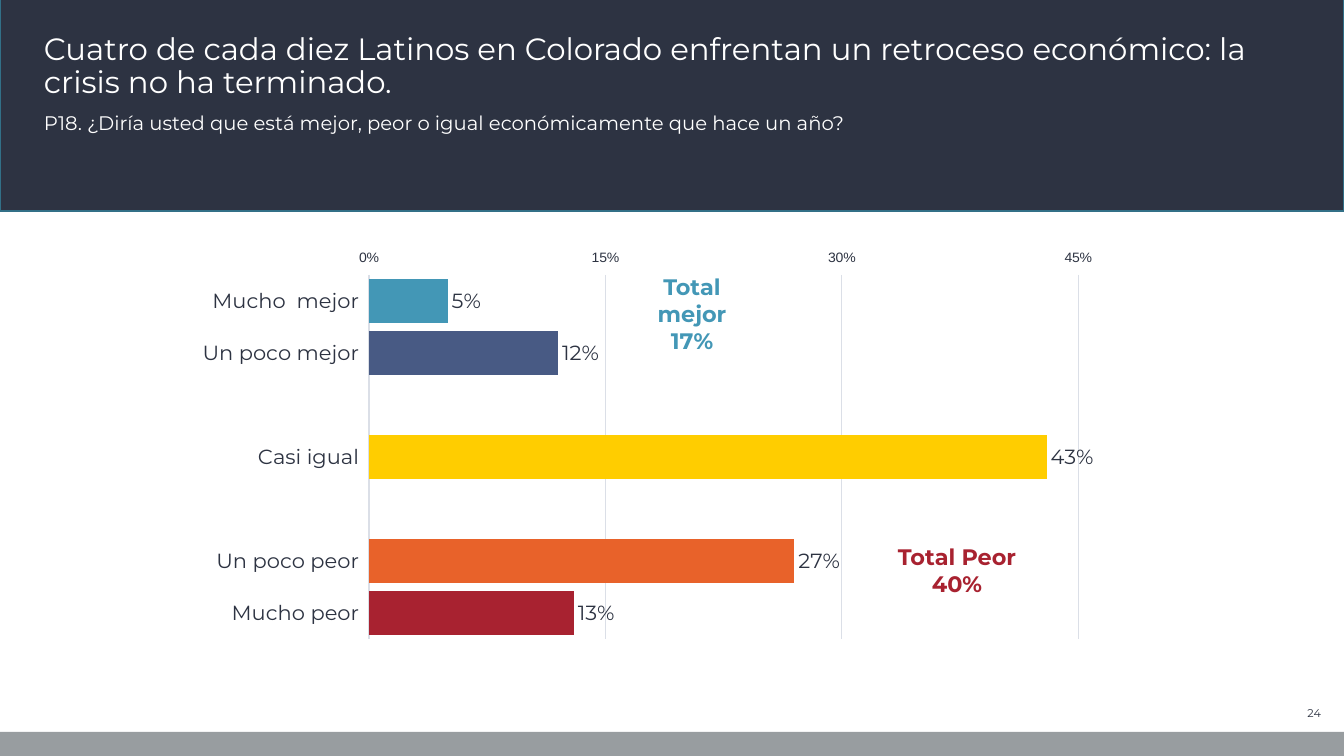
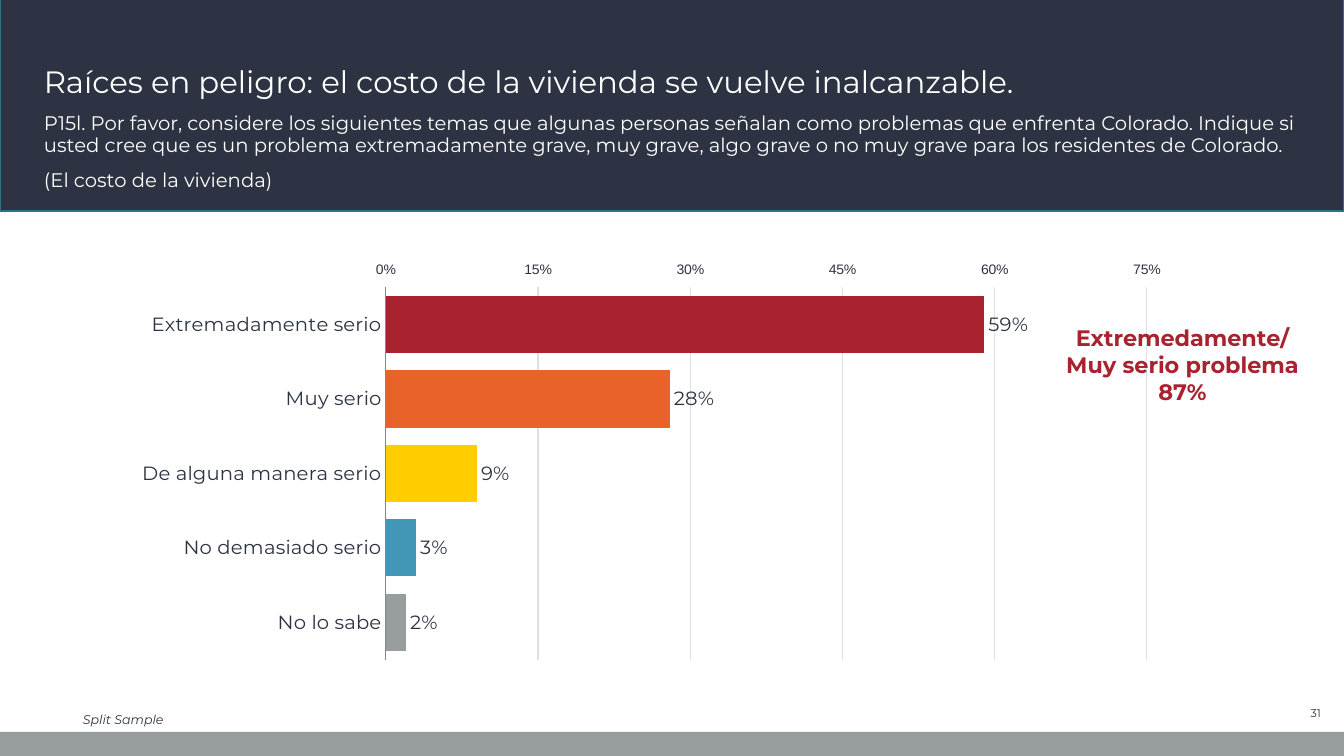
"""Build two survey result slides, each with a bar chart."""
from copy import deepcopy

from lxml import etree
from pptx import Presentation
from pptx.chart.data import CategoryChartData
from pptx.dml.color import RGBColor
from pptx.enum.chart import (XL_AXIS_CROSSES, XL_CHART_TYPE,
                             XL_LABEL_POSITION, XL_TICK_MARK)
from pptx.enum.shapes import MSO_SHAPE
from pptx.enum.text import MSO_ANCHOR, MSO_AUTO_SIZE, PP_ALIGN
from pptx.oxml.ns import qn
from pptx.util import Pt

EMU_PER_PX = 914400 / 100.8
PAGE_WIDTH, PAGE_HEIGHT = 1344, 756
FONT, AXIS_FONT = "Montserrat", "Arial"
COLORS = {
    "navy": "2D3342", "edge": "327087", "gray": "989DA0", "white": "FFFFFF",
    "grid": "DBDFE7", "axis": "868686", "teal": "4397B6", "blue": "485A84",
    "yellow": "FFCD00", "orange": "E8622A", "red": "A82230",
}
RECTANGLE = MSO_SHAPE.RECTANGLE
TOP, MIDDLE, BOTTOM = MSO_ANCHOR.TOP, MSO_ANCHOR.MIDDLE, MSO_ANCHOR.BOTTOM
LEFT, CENTER, RIGHT = PP_ALIGN.LEFT, PP_ALIGN.CENTER, PP_ALIGN.RIGHT
FIT_SHAPE = MSO_AUTO_SIZE.SHAPE_TO_FIT_TEXT
BAR_CLUSTERED = XL_CHART_TYPE.BAR_CLUSTERED
CROSS_AT_MAXIMUM = XL_AXIS_CROSSES.MAXIMUM
OUTSIDE_END = XL_LABEL_POSITION.OUTSIDE_END
TICK_NONE, TICK_OUTSIDE = XL_TICK_MARK.NONE, XL_TICK_MARK.OUTSIDE

SLIDES = [
    {
        "number": "24",
        "title": "Cuatro de cada diez Latinos en Colorado enfrentan un "
                 "retroceso económico: la crisis no ha terminado.",
        "question": ["P18. ¿Diría usted que está mejor, peor o igual "
                     "económicamente que hace un año?"],
        "chart": {
            "box": (100, 250, 1019, 418),
            "plot": (0.264, 0.033, 0.696, 0.896),
            "bars": [("Mucho  mejor", 0.05, "teal"),
                     ("Un poco mejor", 0.12, "blue"),
                     ("", None, None),
                     ("Casi igual", 0.43, "yellow"),
                     ("", None, None),
                     ("Un poco peor", 0.27, "orange"),
                     ("Mucho peor", 0.13, "red")],
            "gap": 20, "maximum": 0.45, "size": 15,
            "tick": TICK_OUTSIDE, "axis_line": False,
        },
        "callouts": [((619, 268, 146, 92), "Total mejor\n17%", "teal"),
                     ((884, 538, 146, 65), "Total Peor\n40%", "red")],
        "footnote": None,
    },
    {
        "number": "31",
        "title": "Raíces en peligro: el costo de la vivienda se vuelve "
                 "inalcanzable.",
        "question": ["P15l. Por favor, considere los siguientes temas que "
                     "algunas personas señalan como problemas que enfrenta "
                     "Colorado. Indique si usted cree que es un problema "
                     "extremadamente grave, muy grave, algo grave o no muy "
                     "grave para los residentes de Colorado.",
                     "(El costo de la vivienda)"],
        "chart": {
            "box": (50, 262, 1162, 423),
            "plot": (0.289, 0.043, 0.655, 0.896),
            "bars": [("Extremadamente serio", 0.59, "red"),
                     ("Muy serio", 0.28, "orange"),
                     ("De alguna manera serio", 0.09, "yellow"),
                     ("No demasiado serio", 0.03, "teal"),
                     ("No lo sabe", 0.02, "gray")],
            "gap": 30, "maximum": 0.75, "size": 14,
            "tick": TICK_NONE, "axis_line": True,
        },
        "callouts": [((1056, 319, 253, 92),
                      "Extremedamente/ Muy serio problema\n87%", "red")],
        "footnote": "Split Sample",
    },
]


def px(length):
    """Turn pixels into EMU."""
    return round(length * EMU_PER_PX)


def place(box):
    """Turn a pixel box into EMU."""
    return [px(length) for length in box]


def color(name):
    """Look up a palette colour."""
    return RGBColor.from_string(COLORS[name])


def set_values(target, values):
    """Set each named attribute of an object."""
    for name, value in values.items():
        setattr(target, name, value)


def style_font(font, size, color_name="navy", name=FONT, **extras):
    """Give a font its face, size, colour and extras."""
    set_values(font, {"name": name, "size": Pt(size), **extras})
    font.color.rgb = color(color_name)


def add_band(page, box, fill, edge=None):
    """Draw a full-width band."""
    band = page.shapes.add_shape(RECTANGLE, *place(box))
    band.shadow.inherit = False
    band.fill.solid()
    band.fill.fore_color.rgb = color(fill)
    if edge:
        band.line.color.rgb = color(edge)
        band.line.width = Pt(1)
    else:
        band.line.fill.background()


def add_text(page, box, texts, size, color_name="navy", anchor=TOP,
             align=LEFT, spacing=None, auto_size=None, **extras):
    """Place a wrapped text box with one paragraph per text."""
    frame = page.shapes.add_textbox(*place(box)).text_frame
    set_values(frame, {"word_wrap": True, "vertical_anchor": anchor,
                       "auto_size": auto_size})
    for index, text in enumerate(texts):
        para = frame.add_paragraph() if index else frame.paragraphs[0]
        para.text = text
        set_values(para, {"alignment": align, "line_spacing": spacing})
        if index:
            para.space_before = Pt(10)
        for span in para.runs:
            style_font(span.font, size, color_name, **extras)
        for line_break in para._p.findall(qn("a:br")):
            line_break.insert(0, deepcopy(para.runs[0]._r.rPr))


def add_header(page, box, title, question):
    """Draw the dark header with its title and question."""
    left, top, width, height = box
    add_band(page, box, "navy", "edge")
    add_text(page, (left + 34, top + 10, width - 70, 98), [title], 22,
             "white", anchor=BOTTOM, spacing=0.9)
    add_text(page, (left + 34, top + 112, width - 70, 93), question, 14,
             "white", spacing=0.9)


def add_footer(page, box, number, footnote):
    """Draw the bottom band, the page number and any footnote."""
    left, top, width, height = box
    add_band(page, box, "gray")
    add_text(page, (left + width - 92, top - 31, 79, 24), [number], 8,
             anchor=MIDDLE, align=RIGHT)
    if footnote:
        add_text(page, (left + 73, top - 31, 1178, 31), [footnote], 9,
                 anchor=BOTTOM, spacing=0.9, italic=True)


def set_plot_layout(chart, fractions):
    """Fix the inner plot area as fractions of the chart."""
    plot_area = chart._chartSpace.chart.plotArea
    for old_layout in plot_area.findall(qn("c:layout")):
        plot_area.remove(old_layout)
    layout = etree.Element(qn("c:layout"))
    manual = etree.SubElement(layout, qn("c:manualLayout"))
    settings = [("layoutTarget", "inner"), ("xMode", "edge"),
                ("yMode", "edge"), *zip("xywh", fractions)]
    for name, value in settings:
        etree.SubElement(manual, qn(f"c:{name}")).set("val", str(value))
    plot_area.insert(0, layout)


def style_axes(chart, details):
    """Format the category and value axes."""
    categories, values = chart.category_axis, chart.value_axis
    set_values(categories, {"reverse_order": True,
                            "crosses": CROSS_AT_MAXIMUM,
                            "has_major_gridlines": False,
                            "major_tick_mark": details["tick"]})
    style_font(categories.tick_labels.font, details["size"])
    if details["axis_line"]:
        categories.format.line.color.rgb = color("axis")
    else:
        categories.format.line.fill.background()
    set_values(values, {"minimum_scale": 0,
                        "maximum_scale": details["maximum"],
                        "major_unit": 0.15, "has_major_gridlines": True,
                        "major_tick_mark": TICK_OUTSIDE})
    set_values(values.tick_labels, {"number_format": "0%",
                                    "number_format_is_linked": False})
    style_font(values.tick_labels.font, 10, name=AXIS_FONT)
    values.format.line.fill.background()
    grid_line = values.major_gridlines.format.line
    grid_line.color.rgb = color("grid")
    grid_line.width = Pt(0.75)


def add_bars(page, details):
    """Place a bar chart with one colour per bar."""
    names, values, fills = zip(*details["bars"])
    data = CategoryChartData(number_format="0%")
    data.categories = names
    data.add_series("Series 1", values)
    chart = page.shapes.add_chart(BAR_CLUSTERED, *place(details["box"]),
                                  data).chart
    set_values(chart, {"has_legend": False, "has_title": False})
    style_font(chart.font, 10)
    set_plot_layout(chart, details["plot"])
    style_axes(chart, details)
    plot = chart.plots[0]
    set_values(plot, {"gap_width": details["gap"], "vary_by_categories": False,
                      "has_data_labels": True})
    set_values(plot.data_labels, {"show_value": True, "number_format": "0%",
                                  "number_format_is_linked": False,
                                  "position": OUTSIDE_END})
    style_font(plot.data_labels.font, details["size"])
    series = plot.series[0]
    series.format.fill.solid()
    series.format.fill.fore_color.rgb = color("teal")
    for index, fill_name in enumerate(fills):
        if fill_name:
            fill = series.points[index].format.fill
            fill.solid()
            fill.fore_color.rgb = color(fill_name)


def add_result_page(deck, content):
    """Build one result slide."""
    page = deck.slides.add_slide(deck.slide_layouts[6])
    add_header(page, (0, -3, PAGE_WIDTH, 214), content["title"],
               content["question"])
    add_footer(page, (0, PAGE_HEIGHT - 24, PAGE_WIDTH, 24),
               content["number"], content["footnote"])
    add_bars(page, content["chart"])
    for box, text, color_name in content["callouts"]:
        add_text(page, box, [text], 16, color_name, align=CENTER,
                 auto_size=FIT_SHAPE, bold=True)


def main():
    """Build and save the deck."""
    deck = Presentation()
    set_values(deck, {"slide_width": px(PAGE_WIDTH),
                      "slide_height": px(PAGE_HEIGHT)})
    for content in SLIDES:
        add_result_page(deck, content)
    deck.save("out.pptx")


if __name__ == "__main__":
    main()
